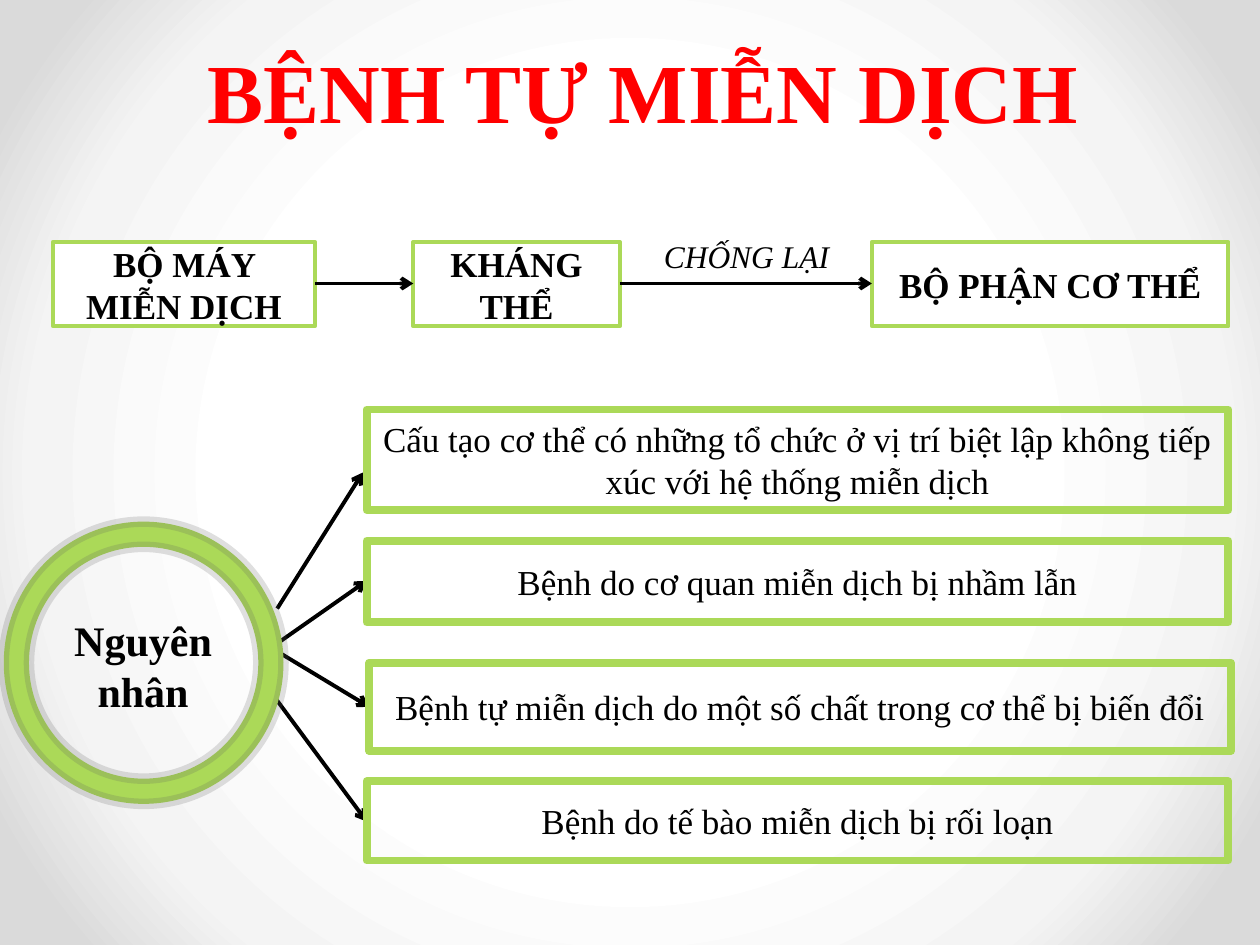
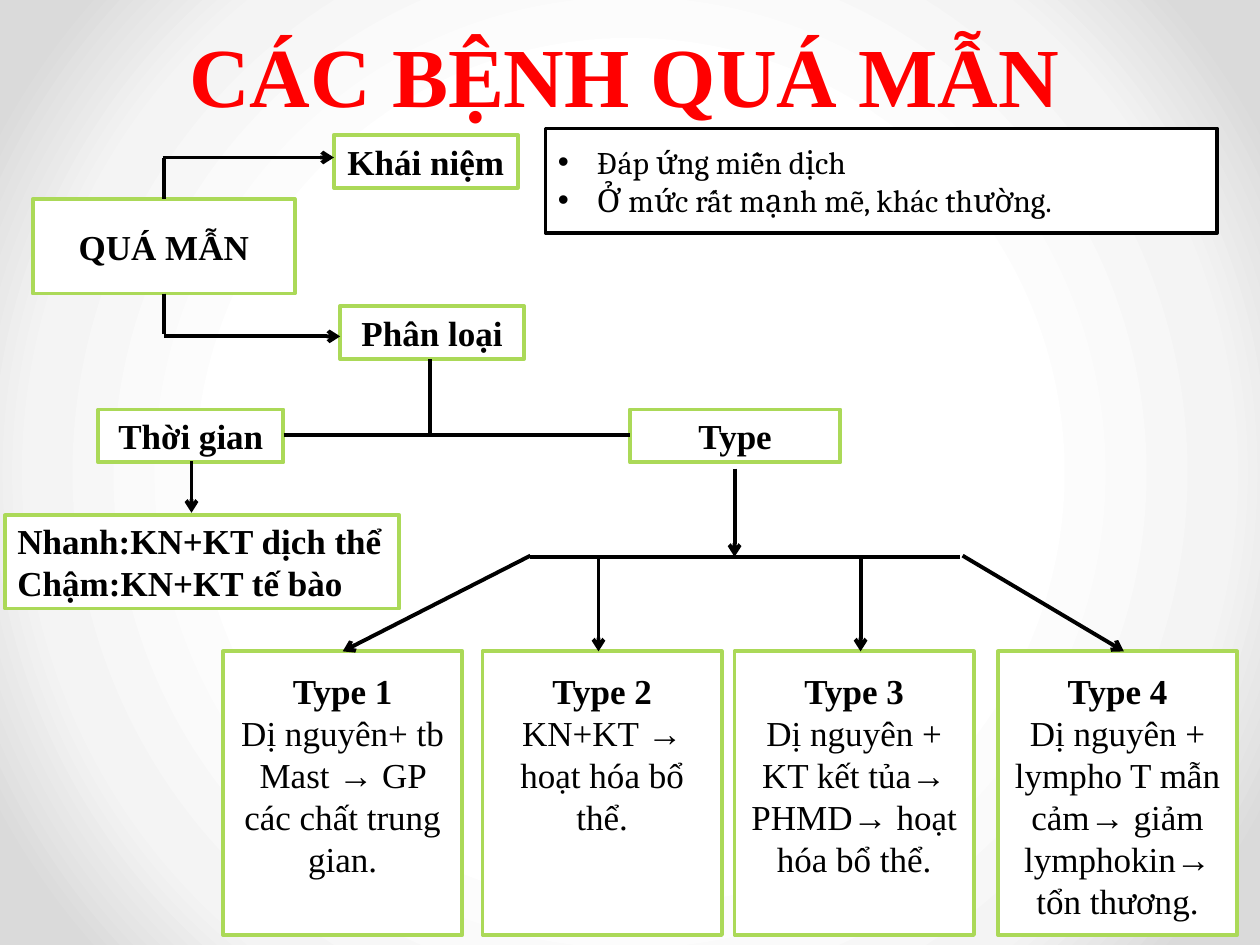
"""Build two slides on autoimmune disease and hypersensitivity."""
import pptx
import pptx.util
import pptx.oxml
import pptx.oxml.ns
import pptx.dml.color
import pptx.enum.text
import pptx.enum.shapes
from lxml import etree

Inches, Pt = pptx.util.Inches, pptx.util.Pt
qn = pptx.oxml.ns.qn
ALIGN = pptx.enum.text.PP_ALIGN
ANCHOR = pptx.enum.text.MSO_ANCHOR
SHAPE = pptx.enum.shapes.MSO_SHAPE
LINK = pptx.enum.shapes.MSO_CONNECTOR

COLORS = {"title": "FF0000", "text": "000000", "green": "ABD958",
          "white": "FFFFFF", "rim": "5F5F5F"}
GLOW = [(0, "FFFFFF"), (50, "FFFFFF"), (76, "F4F4F4"), (92, "DADADA"), (100, "DADADA")]
FONT = "Times New Roman"

CHAIN_TOP, CHAIN_HIGH = 1.92, 0.67
CHAIN = [("BỘ MÁY MIỄN DỊCH", 0.42, 2.08),
         ("KHÁNG THỂ", 3.28, 1.64),
         ("BỘ PHẬN CƠ THỂ", 6.92, 2.83)]
CAUSES = [
    (["Cấu tạo cơ thể có những tổ chức ở vị trí biệt lập không tiếp",
      "xúc với hệ thống miễn dịch"], (2.91, 3.25, 6.84, 0.8)),
    (["Bệnh do cơ quan miễn dịch bị nhầm lẫn"], (2.91, 4.29, 6.84, 0.65)),
    (["Bệnh tự miễn dịch do một số chất trong cơ thể bị biến đổi"],
     (2.93, 5.26, 6.84, 0.7)),
    (["Bệnh do tế bào miễn dịch bị rối loạn"], (2.91, 6.2, 6.84, 0.63)),
]
RAYS = [(2.2, 4.83, 2.88, 3.75), (2.21, 5.1, 2.91, 4.61),
        (2.2, 5.17, 2.93, 5.61), (2.17, 5.52, 2.91, 6.52)]

NODES = [("QUÁ MẪN", (0.26, 1.58, 2.08, 0.75)),
         ("Khái niệm", (2.65, 1.07, 1.46, 0.42)),
         ("Phân loại", (2.7, 2.43, 1.46, 0.42)),
         ("Thời gian", (0.78, 3.25, 1.47, 0.42)),
         ("Type", (5, 3.25, 1.67, 0.42))]
CONCEPT = ["Đáp ứng miễn dịch", "Ở mức rất mạnh mẽ, khác thường."]
SPEEDS = ["Nhanh:KN+KT dịch thể", "Chậm:KN+KT tế bào"]
TYPES = [(1.77, "Dị nguyên+ tb Mast → GP các chất trung gian."),
         (3.83, "KN+KT → hoạt hóa bổ thể."),
         (5.83, "Dị nguyên + KT kết tủa→ PHMD→ hoạt hóa bổ thể."),
         (7.92, "Dị nguyên + lympho T mẫn cảm→ giảm lymphokin→ tổn thương.")]
LINES = [(1.3, 1.25, 1.3, 1.58), (1.3, 2.33, 1.3, 2.65), (3.41, 2.85, 3.41, 3.45),
         (2.25, 3.45, 5, 3.45), (4.21, 4.42, 7.62, 4.42)]
ARROWS = [(1.29, 1.25, 2.65, 1.25), (1.3, 2.67, 2.7, 2.67), (1.52, 3.66, 1.52, 4.07),
          (5.83, 3.72, 5.83, 4.42), (4.21, 4.41, 2.72, 5.17), (4.75, 4.42, 4.75, 5.17),
          (6.83, 4.42, 6.83, 5.17), (7.64, 4.41, 8.92, 5.17)]


def rgb(name):
    return pptx.dml.color.RGBColor.from_string(COLORS[name])


def spots(nums):
    return [Inches(num) for num in nums]


def write(shape, paras, size=20, bold=False, italic=False, font=FONT,
          align=ALIGN.CENTER, color="text", wrap=True, anchor=ANCHOR.MIDDLE):
    frame = shape.text_frame
    frame.text = "\n".join(paras)
    frame.word_wrap = wrap
    frame.vertical_anchor = anchor
    for para in frame.paragraphs:
        para.alignment = align
        for run in para.runs:
            face = run.font
            face.name, face.size = font, Pt(size)
            face.bold, face.italic = bold, italic
            face.color.rgb = rgb(color)
    return frame


def box(slide, paras, place, edge="green", width=2.25, fill="white", **style):
    shape = slide.shapes.add_shape(SHAPE.RECTANGLE, *spots(place))
    shape.shadow.inherit = False
    if fill:
        shape.fill.solid()
        shape.fill.fore_color.rgb = rgb(fill)
    else:
        shape.fill.background()
    shape.line.color.rgb = rgb(edge)
    shape.line.width = Pt(width)
    return write(shape, paras, **style)


def label(slide, text, place, **style):
    write(slide.shapes.add_textbox(*spots(place)), [text], anchor=ANCHOR.TOP, **style)


def link(slide, ends, arrow=True):
    line = slide.shapes.add_connector(LINK.STRAIGHT, *spots(ends))
    line.line.color.rgb = rgb("text")
    line.line.width = Pt(2.25)
    props = line.element.spPr
    if arrow:
        etree.SubElement(props.find(qn("a:ln")), qn("a:tailEnd"), type="arrow")
    etree.SubElement(props, qn("a:effectLst"))


def ring(slide, place, band):
    shape = slide.shapes.add_shape(SHAPE.DONUT, *spots(place))
    shape.adjustments[0] = band / place[2]
    shape.shadow.inherit = False
    shape.fill.solid()
    shape.fill.fore_color.rgb = rgb("green")
    shape.line.color.rgb = rgb("rim")
    shape.line.width = Pt(6)
    tint = shape.element.spPr.find(qn("a:ln")).find(".//" + qn("a:srgbClr"))
    etree.SubElement(tint, qn("a:alpha"), val="20000")


def bullets(frame):
    for para in frame.paragraphs:
        props = para._p.get_or_add_pPr()
        props.set("marL", str(Inches(0.31)))
        props.set("indent", str(-Inches(0.31)))
        etree.SubElement(props, qn("a:buFont"), typeface="Arial")
        etree.SubElement(props, qn("a:buChar"), char="•")


def backdrop(master):
    master.background.fill.solid()
    props = master.element.find(".//" + qn("p:bgPr"))
    stops = "".join(f'<a:gs pos="{pos * 1000}"><a:srgbClr val="{tone}"/></a:gs>'
                    for pos, tone in GLOW)
    glow = pptx.oxml.parse_xml(
        f'<a:gradFill {pptx.oxml.ns.nsdecls("a")} rotWithShape="1">'
        f'<a:gsLst>{stops}</a:gsLst><a:path path="circle">'
        '<a:fillToRect l="50000" t="50000" r="50000" b="50000"/></a:path></a:gradFill>')
    props.replace(props[0], glow)


def start(deck, text, place):
    slide = deck.slides.add_slide(deck.slide_layouts[5])
    title = slide.shapes.title
    title.left, title.top, title.width, title.height = spots(place)
    frame = write(title, [text], size=48, bold=True, color="title")
    frame.auto_size = pptx.enum.text.MSO_AUTO_SIZE.NONE
    frame.paragraphs[0].line_spacing = Pt(58)
    return slide


def immune(deck):
    slide = start(deck, "BỆNH TỰ MIỄN DỊCH", (1.46, 0.25, 7.29, 0.92))
    for text, left, wide in CHAIN:
        box(slide, [text], (left, CHAIN_TOP, wide, CHAIN_HIGH), bold=True)
    for (_, left, wide), (_, goal, _) in zip(CHAIN, CHAIN[1:]):
        link(slide, (left + wide, 2.25, goal, 2.25))
    label(slide, "CHỐNG LẠI", (5.17, 1.83, 1.83, 0.4), size=18, italic=True,
          align=ALIGN.LEFT)
    for (paras, place), ray in zip(CAUSES, RAYS):
        link(slide, ray)
        box(slide, paras, place, width=4.5, fill=None, wrap=False)
    label(slide, "Nguyên nhân", (0.39, 4.83, 1.49, 0.91), size=24, bold=True)
    ring(slide, (0.03, 4.14, 2.22, 2.24), 0.2)


def allergy(deck):
    slide = start(deck, "CÁC BỆNH QUÁ MẪN", (0.82, 0.17, 8.27, 0.83))
    for text, place in NODES:
        box(slide, [text], place, bold=True)
    bullets(box(slide, CONCEPT, (4.33, 1.02, 5.33, 0.83), edge="text", size=18,
                font="Cambria", align=ALIGN.LEFT))
    box(slide, SPEEDS, (0.04, 4.09, 3.13, 0.74), bold=True, align=ALIGN.LEFT)
    for num, (left, text) in enumerate(TYPES, 1):
        frame = box(slide, [f"Type {num}", text], (left, 5.17, 1.9, 2.25),
                    anchor=ANCHOR.TOP)
        frame.margin_top = Inches(0.14)
        frame.paragraphs[0].runs[0].font.bold = True
    for ends in LINES:
        link(slide, ends, arrow=False)
    for ends in ARROWS:
        link(slide, ends)


def main():
    deck = pptx.Presentation()
    deck.slide_width, deck.slide_height = Inches(10), Inches(7.5)
    backdrop(deck.slide_master)
    immune(deck)
    allergy(deck)
    deck.save("out.pptx")


if __name__ == "__main__":
    main()
